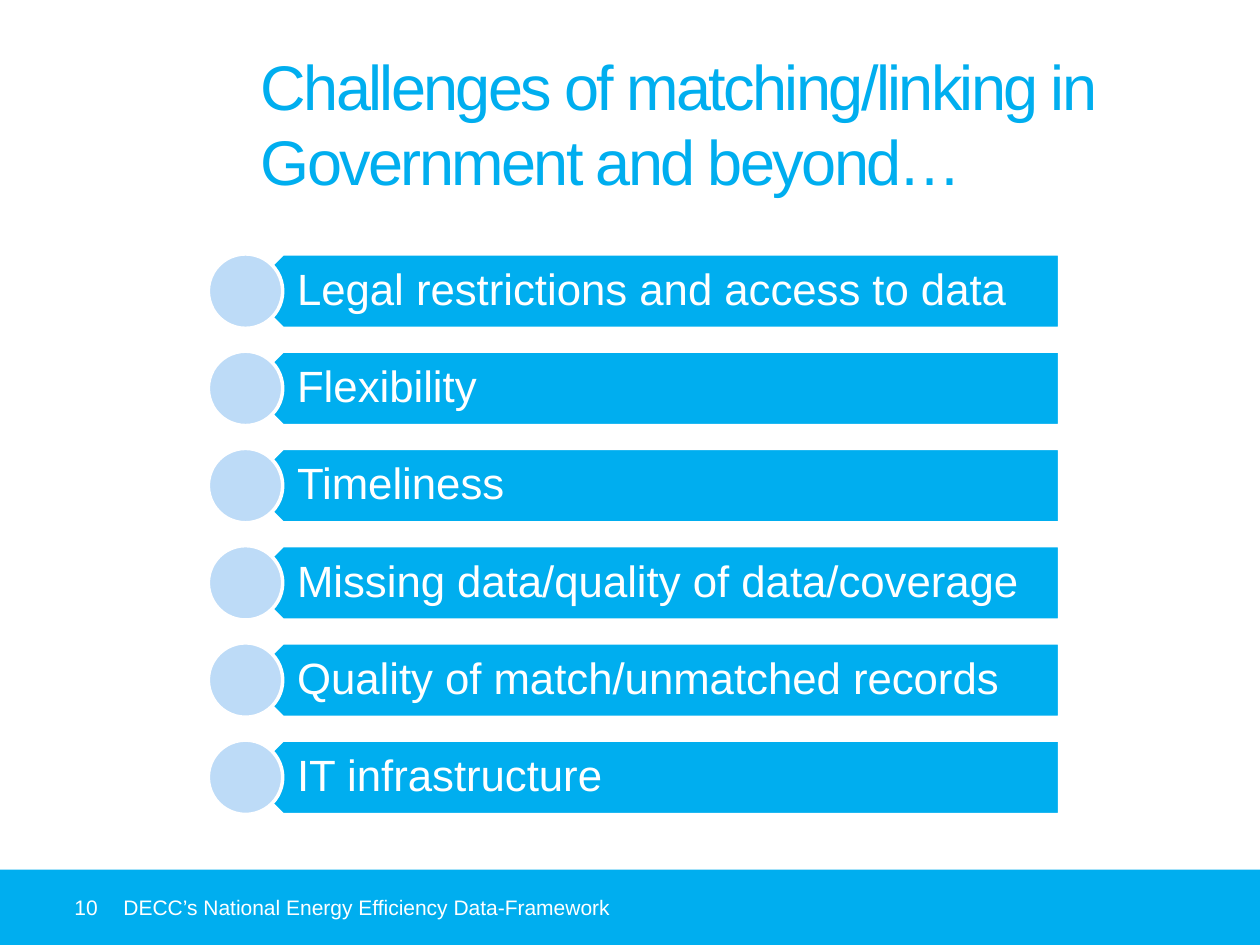
"""Build the slide on the challenges of matching and linking data."""
from dataclasses import dataclass

from pptx import Presentation
from pptx.dml.color import RGBColor
from pptx.enum.shapes import MSO_SHAPE
from pptx.enum.text import MSO_ANCHOR, PP_ALIGN
from pptx.util import Cm, Pt

RECT = MSO_SHAPE.RECTANGLE
PLATE = MSO_SHAPE.PENTAGON
OVAL = MSO_SHAPE.OVAL
TOP = MSO_ANCHOR.TOP
MIDDLE = MSO_ANCHOR.MIDDLE
LEFT = PP_ALIGN.LEFT

COLOURS = {"blue": "00AEEF", "pale": "BDDBF7", "white": "FFFFFF"}
ITEMS = [
    "Legal restrictions and access to data",
    "Flexibility",
    "Timeliness",
    "Missing data/quality of data/coverage",
    "Quality of match/unmatched records",
    "IT infrastructure",
]
FIRST, PITCH, HEIGHT = 5.12, 1.96, 1.5


@dataclass
class Box:
    left: float
    top: float
    width: float
    height: float

    def place(self) -> tuple:
        return Cm(self.left), Cm(self.top), Cm(self.width), Cm(self.height)


@dataclass
class Style:
    size: float
    colour: str = "white"
    anchor: MSO_ANCHOR = MIDDLE
    insets: tuple = (0, 0, 0, 0)
    spacing: float | Pt | None = None


def tint(name: str) -> RGBColor:
    return RGBColor.from_string(COLOURS[name])


def write(shape, text: str, style: Style):
    frame = shape.text_frame
    frame.word_wrap = True
    frame.vertical_anchor = style.anchor
    (frame.margin_left, frame.margin_top,
     frame.margin_right, frame.margin_bottom) = map(Cm, style.insets)
    para = frame.paragraphs[0]
    para.text = text
    para.alignment = LEFT
    para.line_spacing = style.spacing
    para.font.name = "Arial"
    para.font.size = Pt(style.size)
    para.font.color.rgb = tint(style.colour)
    return para


def label(shapes, box: Box, text: str, style: Style):
    return write(shapes.add_textbox(*box.place()), text, style)


def draw(shapes, kind: MSO_SHAPE, box: Box, fill: str, edge: str | None = None):
    shape = shapes.add_shape(kind, *box.place())
    shape.shadow.inherit = False
    shape.fill.solid()
    shape.fill.fore_color.rgb = tint(fill)
    if edge:
        shape.line.color.rgb = tint(edge)
        shape.line.width = Pt(2)
    else:
        shape.line.fill.background()
    return shape


def add_row(shapes, top: float, text: str) -> None:
    plate = draw(shapes, PLATE, Box(4.95, top, 16.41, HEIGHT), "blue", "white")
    plate.rotation = 180
    style = Style(25, insets=(0.66, 0.25, 0.48, 0.25), spacing=0.9)
    label(shapes, Box(5.33, top, 16.03, HEIGHT), text, style)
    draw(shapes, OVAL, Box(4.2, top, HEIGHT, HEIGHT), "pale", "white")


def main() -> None:
    deck = Presentation()
    deck.slide_width, deck.slide_height = Cm(25.4), Cm(19.05)
    shapes = deck.slides.add_slide(deck.slide_layouts[6]).shapes

    title = label(shapes, Box(5.26, 0.97, 19, 1.8),
                  "Challenges of matching/linking in Government and beyond…",
                  Style(36, "blue", TOP, spacing=Pt(43)))
    title.runs[0].font._element.set("spc", "-150")

    band = draw(shapes, RECT, Box(0, 17.53, 25.4, 1.52), "blue")
    write(band, "10", Style(12, insets=(1.5, 0, 0.25, 0)))
    label(shapes, Box(2.49, 17.53, 21.41, 1.52),
          "DECC’s National Energy Efficiency Data-Framework", Style(12))

    group = shapes.add_group_shape().shapes
    for index, item in enumerate(ITEMS):
        add_row(group, FIRST + index * PITCH, item)

    deck.save("out.pptx")


if __name__ == "__main__":
    main()
